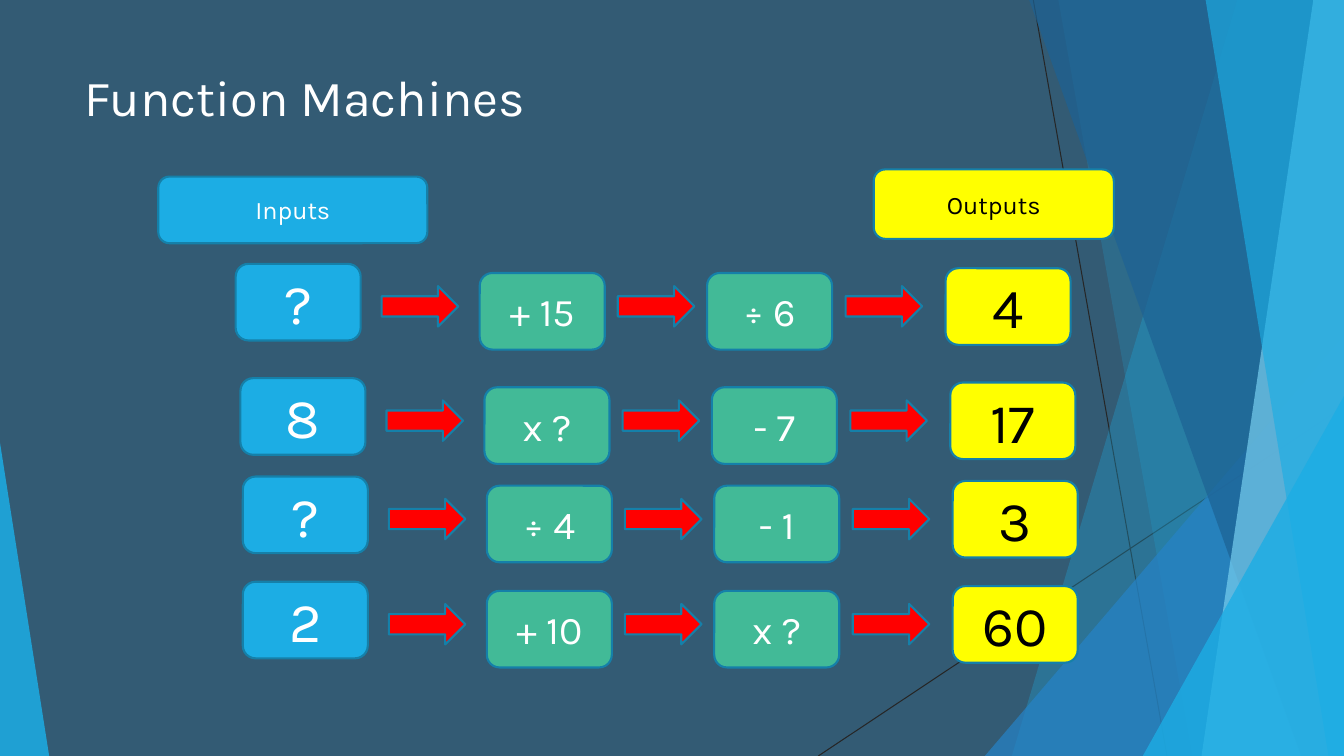
from dataclasses import dataclass
from lxml.etree import SubElement
from pptx import Presentation
from pptx.dml.color import RGBColor
from pptx.enum.shapes import MSO_CONNECTOR, MSO_SHAPE
from pptx.enum.text import MSO_ANCHOR, PP_ALIGN
from pptx.oxml.ns import qn
from pptx.util import Cm, Pt


@dataclass(frozen=True)
class Theme:
    back: str = "335B74"
    blue: str = "1CADE4"
    royal: str = "2683C6"
    navy: str = "1D6294"
    pale: str = "77CEEF"
    green: str = "42BA97"
    yellow: str = "FFFF00"
    red: str = "FF0000"
    edge: str = "1580A9"
    thread: str = "262626"
    white: str = "FFFFFF"
    black: str = "000000"
    font: str = "Karla"
    title: int = 36
    value: int = 40
    step: int = 28
    label: int = 18


def paint(shape, color, alpha=None):
    shape.shadow.inherit = False
    shape.fill.solid()
    shape.fill.fore_color.rgb = RGBColor.from_string(color)
    if alpha is None:
        shape.line.color.rgb = RGBColor.from_string(theme.edge)
        shape.line.width = Pt(1.5)
    else:
        shape.line.fill.background()
        tint = shape.fill._xPr.find(".//" + qn("a:srgbClr"))
        SubElement(tint, qn("a:alpha")).set("val", str(alpha * 1000))


def write(shape, text, size, color, align):
    frame = shape.text_frame
    frame.word_wrap = True
    frame.vertical_anchor = MSO_ANCHOR.MIDDLE
    para = frame.paragraphs[0]
    para.alignment = align
    run = para.add_run()
    run.text = text
    run.font.name = theme.font
    run.font.size = Pt(size)
    run.font.color.rgb = RGBColor.from_string(color)


theme = Theme()
deck = Presentation()
deck.slide_width = Cm(33.87)
deck.slide_height = Cm(19.05)
slide = deck.slides.add_slide(deck.slide_layouts[6])
slide.background.fill.solid()
slide.background.fill.fore_color.rgb = RGBColor.from_string(theme.back)
shapes = slide.shapes

for ends in [(26.04, 0, 29.41, 19.05), (33.87, 10.24, 20.62, 19.05)]:
    line = shapes.add_connector(MSO_CONNECTOR.STRAIGHT, *map(Cm, ends))
    line.line.color.rgb = RGBColor.from_string(theme.thread)
    line.line.width = Pt(0.75)
    SubElement(line._element.spPr, qn("a:effectLst"))

bands = [
    ("sheet", (31.19, 25.5), theme.blue, 30),
    ("sheet", (26.67, 30.05), theme.blue, 20),
    ("wedge", (24.82, 8.46, 9.05, 1), theme.royal, 72),
    ("sheet", (25.93, 32.79), theme.navy, 70),
    ("sheet", (33.1, 30.28), theme.pale, 70),
    ("sheet", (30.38, 33.48), theme.blue, 65),
    ("wedge", (28.8, 9.98, 5.07, 1), theme.blue, 80),
    ("wedge", (0, 11.15, 1.24, 0), theme.blue, 85),
]
for kind, place, color, alpha in bands:
    if kind == "sheet":
        top, foot = map(Cm, place)
        path = shapes.build_freeform(top, Cm(-0.02))
        path.add_line_segments([
            (deck.slide_width, Cm(-0.02)),
            (deck.slide_width, deck.slide_height),
            (foot, deck.slide_height),
        ])
        band = path.convert_to_shape()
    else:
        left, top, width, peak = place
        band = shapes.add_shape(MSO_SHAPE.ISOSCELES_TRIANGLE, Cm(left), Cm(top),
                                Cm(width), Cm(19.05 - top))
        band.adjustments[0] = peak
    paint(band, color, alpha)

title = shapes.add_textbox(Cm(1.88), Cm(0.61), Cm(23.88), Cm(3.66))
write(title, "Function Machines", theme.title, theme.white, PP_ALIGN.LEFT)

heads = [
    ("Inputs", (3.99, 4.45, 6.78, 1.68), theme.blue, theme.white),
    ("Outputs", (22.02, 4.27, 6.05, 1.75), theme.yellow, theme.black),
]
for text, place, color, ink in heads:
    head = shapes.add_shape(MSO_SHAPE.ROUNDED_RECTANGLE, *map(Cm, place))
    paint(head, color)
    write(head, text, theme.label, ink, PP_ALIGN.CENTER)

slots = [
    (0, 0, theme.blue, theme.white, theme.value),
    (6.15, 0.23, theme.green, theme.white, theme.step),
    (11.88, 0.23, theme.green, theme.white, theme.step),
    (17.89, 0.11, theme.yellow, theme.black, theme.value),
]
rows = [
    (5.94, 6.65, ["?", "+ 15", "÷ 6", "4"]),
    (6.06, 9.53, ["8", "x ?", "- 7", "17"]),
    (6.12, 12.01, ["?", "÷ 4", "- 1", "3"]),
    (6.12, 14.66, ["2", "+ 10", "x ?", "60"]),
]
for left, top, texts in rows:
    for text, (right, down, color, ink, size) in zip(texts, slots):
        box = shapes.add_shape(MSO_SHAPE.ROUNDED_RECTANGLE, Cm(left + right),
                               Cm(top + down), Cm(3.15), Cm(1.93))
        paint(box, color)
        write(box, text, size, ink, PP_ALIGN.CENTER)
    for right in [3.68, 9.63, 15.37]:
        arrow = shapes.add_shape(MSO_SHAPE.RIGHT_ARROW, Cm(left + right),
                                 Cm(top + 0.56), Cm(1.93), Cm(1.02))
        paint(arrow, theme.red)

deck.save("out.pptx")
